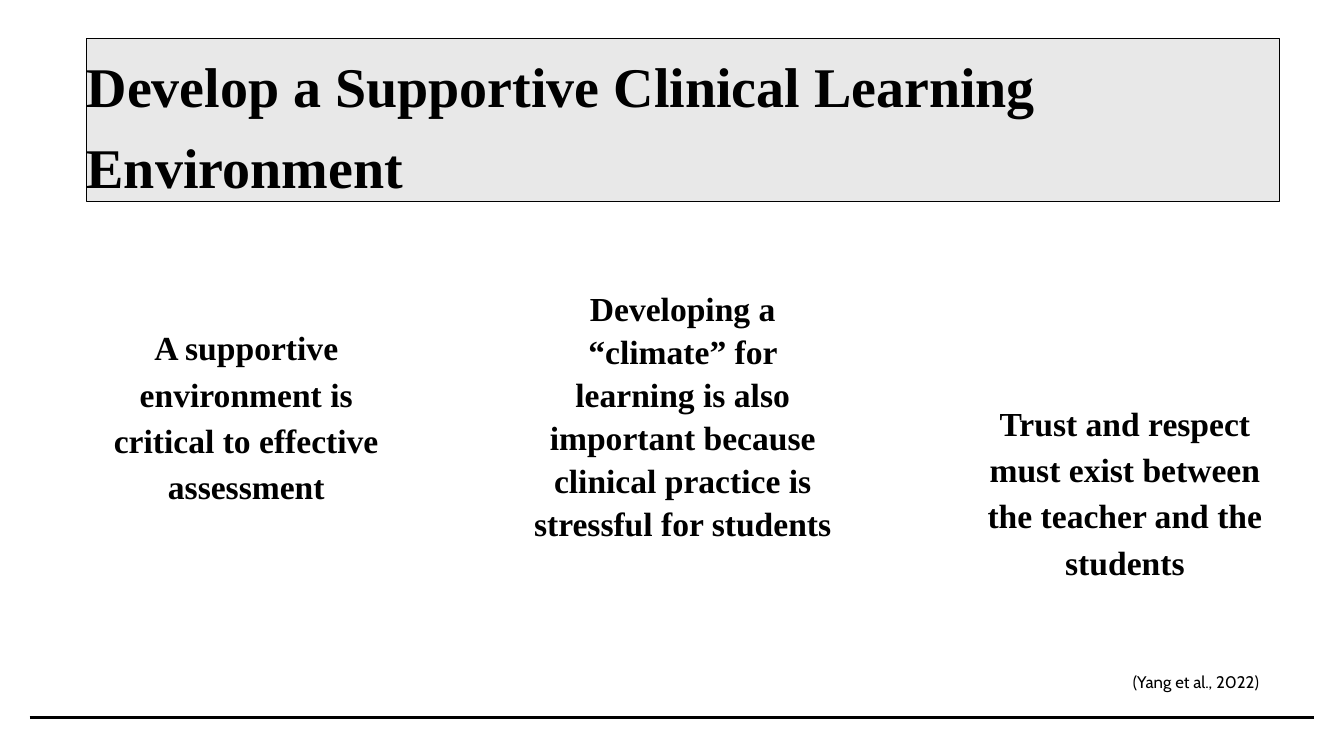
import pptx
import pptx.util
import pptx.dml.color
import pptx.enum.text
import pptx.enum.shapes
import pptx.oxml.ns
import lxml.etree

HUES = {"ink": "000000", "band": "E8E8E8", "page": "FFFFFF"}
SERIF, SANS = "Times New Roman", "Cabin"
WIDE, HIGH = 20, 11.25
COL, ROW = WIDE / 100, HIGH / 100  # grid of 100 columns by 100 rows
ALIGN = pptx.enum.text.PP_ALIGN
FIT = pptx.enum.text.MSO_AUTO_SIZE


def hue(name):
    return pptx.dml.color.RGBColor.from_string(HUES[name])


def span(box):
    """Turn (column, row, columns, rows) into slide lengths."""
    return [pptx.util.Inches(n * unit) for n, unit in zip(box, (COL, ROW) * 2)]


def write(shape, text, size, font=SERIF, bold=True, align=ALIGN.LEFT,
          pads=(0, 0), lead=1.0, after=0, dent=0, wrap=True):
    frame = shape.text_frame
    frame.word_wrap = wrap
    frame.auto_size = FIT.SHAPE_TO_FIT_TEXT
    frame.vertical_anchor = pptx.enum.text.MSO_ANCHOR.TOP
    frame.margin_left = frame.margin_right = pptx.util.Inches(pads[0])
    frame.margin_top = frame.margin_bottom = pptx.util.Inches(pads[1])
    para = frame.paragraphs[0]
    para.alignment = align
    para.line_spacing = lead
    para.space_before = pptx.util.Pt(0)
    para.space_after = pptx.util.Pt(after)
    if dent:
        props = para._p.get_or_add_pPr()
        props.set("marL", str(pptx.util.Inches(dent)))
        props.set("indent", "0")
    run = para.add_run()
    run.text = text
    run.font.name = font
    run.font.size = pptx.util.Pt(size)
    run.font.bold = bold
    run.font.color.rgb = hue("ink")


def head(slide, box, text):
    title = slide.shapes.title
    title.left, title.top, title.width, title.height = span(box)
    title.fill.solid()
    title.fill.fore_color.rgb = hue("band")
    title.line.color.rgb = hue("ink")
    title.line.width = pptx.util.Pt(0.75)
    write(title, text, 60, lead=1.2)


def point(slide, box, text, **style):
    note = slide.shapes.add_textbox(*span(box))
    write(note, text, 36, align=ALIGN.CENTER, **style)


def foot(slide, box, cite):
    left, top, width, height = box
    # Rule across the bottom
    x, y, run, _ = span((left, top + height, width, 0))
    rule = slide.shapes.add_connector(
        pptx.enum.shapes.MSO_CONNECTOR.STRAIGHT, x, y, x + run, y)
    rule.line.color.rgb = hue("ink")
    rule.line.width = pptx.util.Pt(3)
    lxml.etree.SubElement(rule._element.spPr, pptx.oxml.ns.qn("a:effectLst"))
    # Citation above its right end
    note = slide.shapes.add_textbox(
        *span((left + width - 14, top, 10.6, 3.56)))
    write(note, cite, 18, SANS, False, pads=(0.1, 0.05), wrap=False)


def main():
    deck = pptx.Presentation()
    deck.slide_width = pptx.util.Inches(WIDE)
    deck.slide_height = pptx.util.Inches(HIGH)
    slide = deck.slides.add_slide(deck.slide_layouts[5])
    slide.background.fill.solid()
    slide.background.fill.fore_color.rgb = hue("page")

    head(slide, (6.45, 5.07, 88.75, 21.51),
         "Develop a Supportive Clinical Learning Environment")

    # Three points
    side = {"lead": 1.15, "dent": 0.25}
    core = {"lead": 1.07, "after": 8, "pads": (0.1, 0.05)}
    point(slide, (5.6, 42.49, 24.2, 24.8),
          "A supportive environment is critical to effective assessment",
          **side)
    point(slide, (38.7, 37.24, 24.2, 35.2),
          "Developing a “climate” for learning is also important because "
          "clinical practice is stressful for students", **core)
    point(slide, (71.8, 52.44, 22.55, 24.8),
          "Trust and respect must exist between the teacher and the students",
          **side)

    foot(slide, (2.2, 88.36, 95.6, 6.57), "(Yang et al., 2022)")
    deck.save("out.pptx")


if __name__ == "__main__":
    main()
